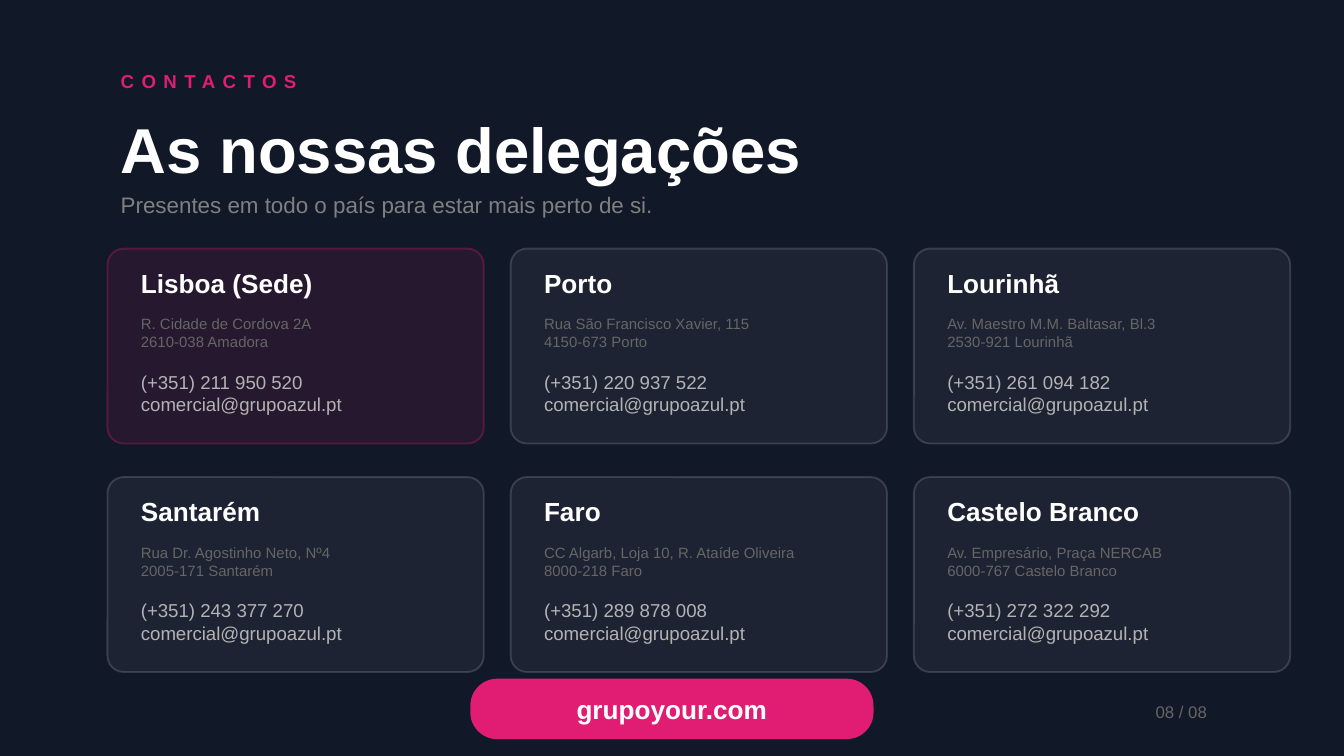
import lxml.etree
import pptx
import pptx.dml.color
import pptx.enum.shapes
import pptx.enum.text
import pptx.oxml.ns
import pptx.util

Pt = pptx.util.Pt
Align = pptx.enum.text.PP_ALIGN

COLOURS = {
    "night": "111827",
    "pink": "E11D73",
    "white": "FFFFFF",
    "silver": "B3B3B3",
    "grey": "808080",
    "dim": "666666",
}
FONT = "Arial"

EYEBROW = "CONTACTOS"
HEADING = "As nossas delegações"
SUBHEADING = "Presentes em todo o país para estar mais perto de si."
EMAIL = "comercial@grupoazul.pt"
WEBSITE = "grupoyour.com"
PAGE = "08 / 08"

# city, street, postcode, phone; the first is the head office
OFFICES = [
    ("Lisboa (Sede)", "R. Cidade de Cordova 2A", "2610-038 Amadora", "(+351) 211 950 520"),
    ("Porto", "Rua São Francisco Xavier, 115", "4150-673 Porto", "(+351) 220 937 522"),
    ("Lourinhã", "Av. Maestro M.M. Baltasar, Bl.3", "2530-921 Lourinhã", "(+351) 261 094 182"),
    ("Santarém", "Rua Dr. Agostinho Neto, Nº4", "2005-171 Santarém", "(+351) 243 377 270"),
    ("Faro", "CC Algarb, Loja 10, R. Ataíde Oliveira", "8000-218 Faro", "(+351) 289 878 008"),
    ("Castelo Branco", "Av. Empresário, Praça NERCAB", "6000-767 Castelo Branco", "(+351) 272 322 292"),
]

LEFT = 57.6
CARDS_TOP = 133.2
CARD_WIDTH, CARD_HEIGHT = 201.6, 104.4
COLUMN_GAP, ROW_GAP = 14.4, 18
COLUMNS = 3
PADDING = 10.8
CORNER = 0.083


def rgb(name):
    return pptx.dml.color.RGBColor.from_string(COLOURS[name])


def write(shape, lines, size, colour, bold=False, align=Align.LEFT):
    """Put one paragraph per line into the shape, centred vertically."""
    frame = shape.text_frame
    frame.word_wrap = True
    frame.auto_size = pptx.enum.text.MSO_AUTO_SIZE.NONE
    frame.vertical_anchor = pptx.enum.text.MSO_ANCHOR.MIDDLE
    for index, line in enumerate(lines):
        paragraph = frame.add_paragraph() if index else frame.paragraphs[0]
        paragraph.alignment = align
        run = paragraph.add_run()
        run.text = line
        run.font.name = FONT
        run.font.size = Pt(size)
        run.font.bold = bold
        run.font.color.rgb = rgb(colour)


def add_text(slide, box, lines, size, colour, bold=False):
    textbox = slide.shapes.add_textbox(*map(Pt, box))
    write(textbox, lines, size, colour, bold)
    return textbox


def add_rounded(slide, box, corner, colour):
    rounded = slide.shapes.add_shape(
        pptx.enum.shapes.MSO_SHAPE.ROUNDED_RECTANGLE, *map(Pt, box))
    rounded.shadow.inherit = False
    rounded.adjustments[0] = corner
    rounded.fill.solid()
    rounded.fill.fore_color.rgb = rgb(colour)
    return rounded


def set_opacities(shape, *percents):
    """Set the opacity of the fill, then of the line."""
    tints = shape._element.spPr.iter(pptx.oxml.ns.qn("a:srgbClr"))
    for tint, percent in zip(list(tints), percents):
        alpha = lxml.etree.SubElement(tint, pptx.oxml.ns.qn("a:alpha"))
        alpha.set("val", str(percent * 1000))


def add_office(slide, index, office):
    city, street, postcode, phone = office
    row, column = divmod(index, COLUMNS)
    left = LEFT + column * (CARD_WIDTH + COLUMN_GAP)
    top = CARDS_TOP + row * (CARD_HEIGHT + ROW_GAP)
    head_office = index == 0
    colour = "pink" if head_office else "white"

    card = add_rounded(slide, (left, top, CARD_WIDTH, CARD_HEIGHT), CORNER, colour)
    card.line.color.rgb = rgb(colour)
    card.line.width = Pt(1)
    set_opacities(card, *((10, 30) if head_office else (5, 15)))

    for offset, height, lines, size, ink, bold in (
        (5.76, 25.2, [city], 14, "white", True),
        (28.8, 32.4, [street, postcode], 8, "dim", False),
        (61.2, 32.4, [phone, EMAIL], 10, "silver", False),
    ):
        box = (left + PADDING, top + offset, 180, height)
        add_text(slide, box, lines, size, ink, bold)


def main():
    deck = pptx.Presentation()
    deck.slide_width, deck.slide_height = Pt(720), Pt(405)
    slide = deck.slides.add_slide(deck.slide_layouts.get_by_name("Title Only"))
    slide.background.fill.solid()
    slide.background.fill.fore_color.rgb = rgb("night")

    title = slide.shapes.title
    title.left, title.top, title.width, title.height = map(Pt, (LEFT, 57.6, 576, 43.2))
    write(title, [HEADING], 34, "white", bold=True)

    eyebrow = add_text(slide, (LEFT, 28.8, 576, 28.8), [EYEBROW], 10, "pink", bold=True)
    eyebrow_run = eyebrow.text_frame.paragraphs[0].runs[0]
    eyebrow_run._r.get_or_add_rPr().set("spc", "400")
    add_text(slide, (LEFT, 97.2, 504, 25.2), [SUBHEADING], 12, "grey")

    for index, office in enumerate(OFFICES):
        add_office(slide, index, office)

    website = add_rounded(slide, (252, 363.6, 216, 32.4), 0.444, "pink")
    website.line.fill.background()
    write(website, [WEBSITE], 14, "white", bold=True, align=Align.CENTER)
    add_text(slide, (612, 367.2, 86.4, 28.8), [PAGE], 9, "dim")

    deck.save("out.pptx")


if __name__ == "__main__":
    main()
